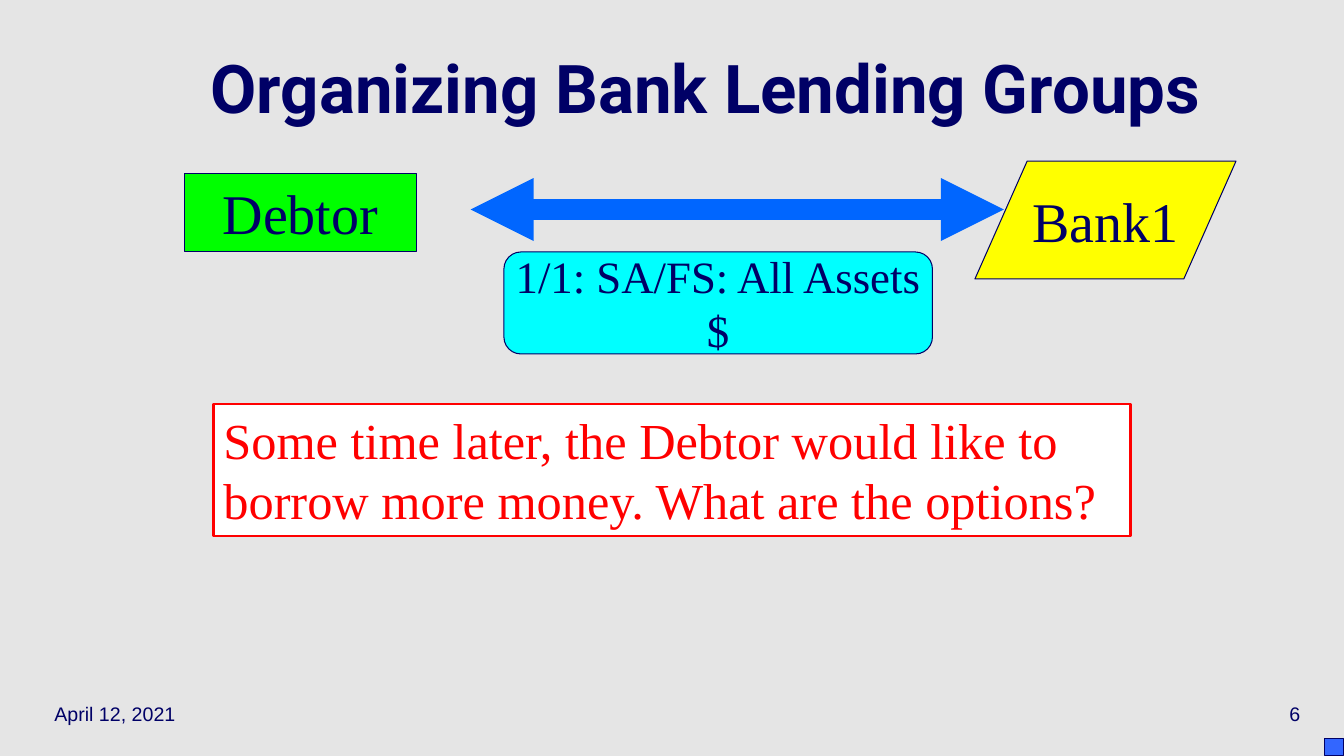
from lxml import etree
from pptx import Presentation
from pptx.dml.color import RGBColor
from pptx.enum import shapes, text
from pptx.oxml import ns
from pptx.util import Cm, Pt

NAVY = "000066"
SERIF = "Times New Roman"
SHAPE = shapes.MSO_SHAPE
ALIGN = text.PP_ALIGN
MIDDLE = text.MSO_ANCHOR.MIDDLE


def rgb(value):
    return RGBColor.from_string(value)


def write(part, words, size, font=SERIF, color=NAVY, align=ALIGN.CENTER,
          wrap=True, bold=False):
    frame = part.text_frame
    frame.text = words
    frame.word_wrap = wrap
    frame.vertical_anchor = MIDDLE
    for paragraph in frame.paragraphs:
        paragraph.alignment = align
        for run in paragraph.runs:
            run.font.size = Pt(size)
            run.font.name = font
            run.font.bold = bold
            run.font.color.rgb = rgb(color)
    return frame


def add_label(slide, box, words, size, **style):
    label = slide.shapes.add_textbox(*map(Cm, box))
    return write(label, words, size, **style)


def add_block(slide, kind, box, fill, line=NAVY, weight=0.75):
    block = slide.shapes.add_shape(kind, *map(Cm, box))
    block.shadow.inherit = False
    block.fill.solid()
    block.fill.fore_color.rgb = rgb(fill)
    block.line.color.rgb = rgb(line)
    block.line.width = Pt(weight)
    return block


def add_double_arrow(slide, left, right, y, color, weight):
    arrow = slide.shapes.add_connector(
        shapes.MSO_CONNECTOR.STRAIGHT, Cm(left), Cm(y), Cm(right), Cm(y))
    arrow.line.color.rgb = rgb(color)
    arrow.line.width = Pt(weight)
    outline = arrow.line._get_or_add_ln()
    for end in ("a:headEnd", "a:tailEnd"):
        etree.SubElement(outline, ns.qn(end), type="triangle")
    etree.SubElement(arrow._element.spPr, ns.qn("a:effectLst"))


def add_title(slide, box):
    title = add_label(slide, box, "Organizing Bank Lending Groups", 48,
                      font="Roboto", bold=True)
    title.paragraphs[0].line_spacing = 0.7


def add_loan_diagram(slide, box):
    left, top, width, height = box
    # Parties
    bank_width = 6.58
    bank = add_block(slide, SHAPE.FLOWCHART_DATA,
                     (left + width - bank_width, top, bank_width, 2.97), "FFFF00")
    write(bank, "Bank1", 40, wrap=False)
    debtor = add_block(slide, SHAPE.FLOWCHART_PROCESS,
                       (left, top + 0.31, 5.84, 1.96), "00FF00")
    write(debtor, "Debtor", 40)
    # Loan between them
    add_double_arrow(slide, left + 7.21, left + 20.65, top + 1.22, "0066FF", 15)
    loan_height = 2.57
    loan = add_block(slide, SHAPE.FLOWCHART_ALTERNATE_PROCESS,
                     (left + 8.05, top + height - loan_height, 10.8, loan_height),
                     "00FFFF")
    write(loan, "1/1: SA/FS: All Assets\n$", 32, wrap=False)


def add_question(slide, box):
    question = add_block(slide, SHAPE.RECTANGLE, box, "FFFFFF", "FF0000", 2)
    frame = write(question, "Some time later, the Debtor would like to borrow "
                  "more money. What are the options?", 36, color="FF0000",
                  align=ALIGN.LEFT)
    frame.vertical_anchor = text.MSO_ANCHOR.TOP
    frame.paragraphs[0].space_before = Pt(4)


def add_footer(slide, box):
    left, top, width, height = box
    field = 7.06
    add_label(slide, (left, top, field, height), "April 12, 2021", 14,
              font="Arial", align=ALIGN.LEFT)
    add_label(slide, (left + width - field, top, field, height), "6", 14,
              font="Arial", align=ALIGN.RIGHT)


def main():
    deck = Presentation()
    deck.slide_width, deck.slide_height = Cm(33.87), Cm(19.05)
    slide = deck.slides.add_slide(deck.slide_layouts[6])
    slide.background.fill.solid()
    slide.background.fill.fore_color.rgb = rgb("E5E5E5")

    add_footer(slide, (1.12, 17.35, 31.9, 1.27))
    add_title(slide, (2.26, 0.84, 31.04, 3.18))
    add_question(slide, (5.38, 10.18, 23.12, 3.33))
    add_loan_diagram(slide, (4.65, 4.06, 26.5, 4.86))
    # Corner marker
    add_block(slide, SHAPE.RECTANGLE, (33.38, 18.6, 0.48, 0.43), "3366FF")

    deck.save("out.pptx")


if __name__ == "__main__":
    main()
